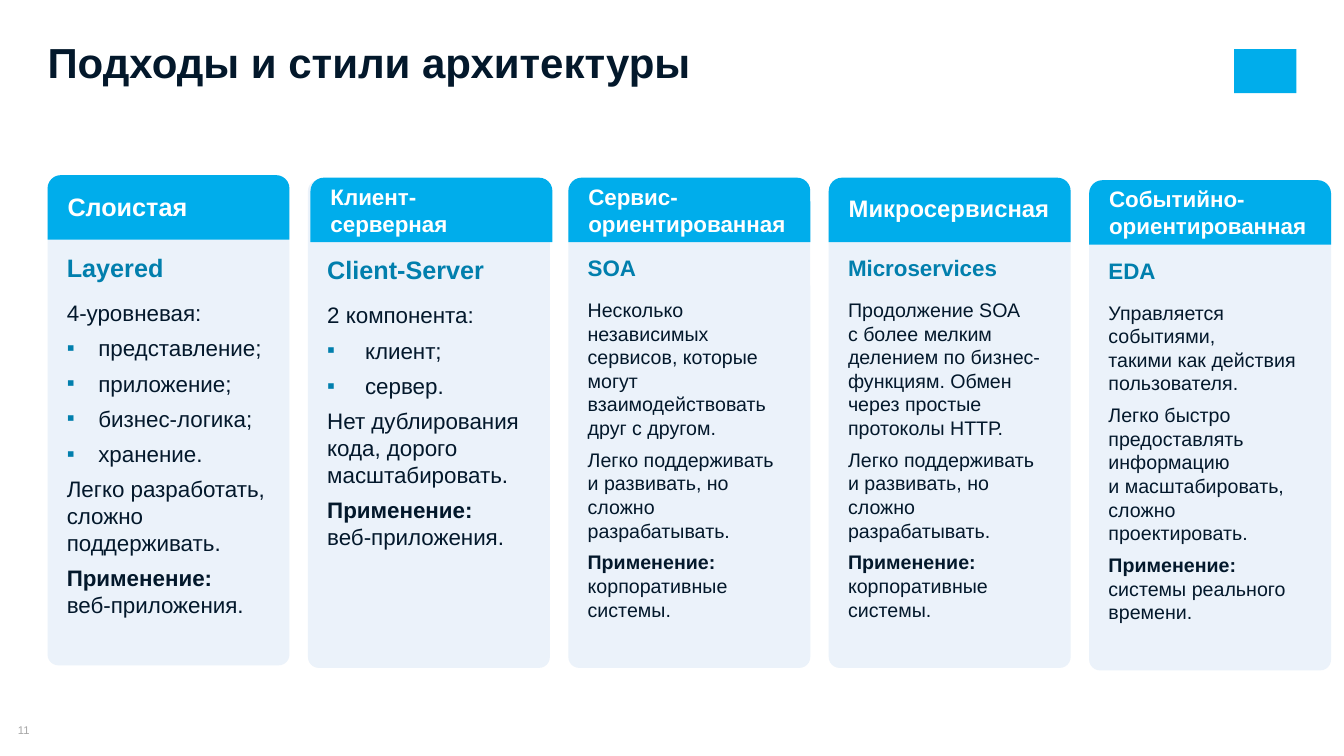
from dataclasses import dataclass

from lxml.etree import SubElement
from pptx import Presentation
from pptx.dml.color import RGBColor
from pptx.enum.shapes import MSO_SHAPE
from pptx.enum.text import MSO_ANCHOR, MSO_AUTO_SIZE, PP_ALIGN
from pptx.oxml.ns import qn
from pptx.util import Pt

CYAN = RGBColor(0x00, 0xAD, 0xEB)
TEAL = RGBColor(0x01, 0x7F, 0xAD)
NAVY = RGBColor(0x03, 0x18, 0x2B)
PALE = RGBColor(0xEB, 0xF2, 0xFA)
GRAY = RGBColor(0xA6, 0xA6, 0xA6)
WHITE = RGBColor(0xFF, 0xFF, 0xFF)

FONT = "Arial"
LEFT, PITCH = 34, 186
CARD_WIDTH, CARD_HEIGHT = 172.8, 348.5
HEADER_HEIGHT, HEADER_RISE = 46, 1.7
INSET = 11.5


@dataclass
class Style:
    """One text card: heading, intro, bullets, remarks and use."""
    name: str
    heading: str
    intro: str
    bullets: list[str]
    verdict: str
    use: str
    top: float = 128.6
    name_size: float = 16
    heading_size: float = 16
    text_size: float = 14
    bullet_indent: float = 0
    header_shift: float = 0
    header_anchor: MSO_ANCHOR = MSO_ANCHOR.MIDDLE
    use_gap: str = " "


STYLES = [
    Style("Слоистая", "Layered", "4-уровневая:",
          ["представление;", "приложение;", "бизнес-логика;", "хранение."],
          "Легко разработать, сложно поддерживать.", "веб-приложения.",
          top=126.8, name_size=18, heading_size=18, text_size=16,
          bullet_indent=22.5, header_anchor=MSO_ANCHOR.TOP, use_gap="\n"),
    Style("Клиент-серверная", "Client-Server", "2 компонента:",
          ["клиент;", "сервер."],
          "Нет дублирования кода, дорого масштабировать.", "веб-приложения.",
          heading_size=18, text_size=16, bullet_indent=27,
          header_shift=1.8, use_gap="\n"),
    Style("Сервис-ориентированная", "SOA",
          "Несколько независимых сервисов, которые могут взаимодействовать друг с другом.",
          [], "Легко поддерживать\nи развивать, но сложно разрабатывать.",
          "корпоративные системы."),
    Style("Микросервисная", "Microservices",
          "Продолжение ЅОА\nс более мелким делением по бизнес-функциям. "
          "Обмен\nчерез простые протоколы НТТР.",
          [], "Легко поддерживать\nи развивать, но сложно разрабатывать.",
          "корпоративные системы.",
          name_size=17, header_anchor=MSO_ANCHOR.TOP),
    Style("Событийно-ориентированная", "EDA",
          "Управляется событиями,\nтакими как действия пользователя.",
          [], "Легко быстро предоставлять информацию\nи масштабировать, сложно проектировать.",
          "системы реального времени.", top=130.4),
]


def add_text(paragraph, text: str, size: float, color: RGBColor, bold: bool = False) -> None:
    """Add runs to a paragraph, with a line break at each newline."""
    for index, line in enumerate(text.split("\n")):
        if index:
            paragraph.add_line_break()
        if line:
            run = paragraph.add_run()
            run.text = line
            run.font.name = FONT
            run.font.size = Pt(size)
            run.font.bold = bold
            run.font.color.rgb = color


def next_paragraph(frame, space_after: float):
    first = frame.paragraphs[0]
    paragraph = frame.add_paragraph() if first.runs else first
    paragraph.alignment = PP_ALIGN.LEFT
    paragraph.space_after = Pt(space_after)
    return paragraph


def set_bullet(paragraph, indent: float) -> None:
    properties = paragraph._p.get_or_add_pPr()
    properties.set("marL", str(Pt(indent)))
    properties.set("indent", str(-Pt(indent)))
    color = SubElement(properties, qn("a:buClr"))
    SubElement(color, qn("a:srgbClr"), val=str(TEAL))
    SubElement(properties, qn("a:buFont"), typeface=FONT)
    SubElement(properties, qn("a:buChar"), char="▪")


def set_frame(frame, anchor: MSO_ANCHOR, side: float, top: float, bottom: float) -> None:
    frame.word_wrap = True
    frame.auto_size = MSO_AUTO_SIZE.NONE
    frame.vertical_anchor = anchor
    frame.margin_left = frame.margin_right = Pt(side)
    frame.margin_top, frame.margin_bottom = Pt(top), Pt(bottom)


def add_block(slide, kind: MSO_SHAPE, left: float, top: float, width: float,
              height: float, fill: RGBColor):
    shape = slide.shapes.add_shape(kind, Pt(left), Pt(top), Pt(width), Pt(height))
    shape.shadow.inherit = False
    shape.fill.solid()
    shape.fill.fore_color.rgb = fill
    shape.line.fill.background()
    return shape


def add_card(slide, style: Style, left: float) -> None:
    # Card body
    body = add_block(slide, MSO_SHAPE.ROUNDED_RECTANGLE, left, style.top,
                     CARD_WIDTH, CARD_HEIGHT, PALE)
    body.adjustments[0] = 0.045
    frame = body.text_frame
    set_frame(frame, MSO_ANCHOR.TOP, INSET, 51, INSET)
    add_text(next_paragraph(frame, 12), style.heading, style.heading_size, TEAL, True)
    add_text(next_paragraph(frame, 6), style.intro, style.text_size, NAVY)
    for bullet in style.bullets:
        paragraph = next_paragraph(frame, 6)
        set_bullet(paragraph, style.bullet_indent)
        add_text(paragraph, bullet, style.text_size, NAVY)
    add_text(next_paragraph(frame, 6), style.verdict, style.text_size, NAVY)
    paragraph = next_paragraph(frame, 6)
    add_text(paragraph, "Применение:", style.text_size, NAVY, True)
    add_text(paragraph, style.use_gap + style.use, style.text_size, NAVY)

    # Card header
    header = add_block(slide, MSO_SHAPE.ROUND_2_SAME_RECTANGLE, left + style.header_shift,
                       style.top - HEADER_RISE, CARD_WIDTH, HEADER_HEIGHT, CYAN)
    header.adjustments[0] = 0.206
    set_frame(header.text_frame, style.header_anchor, INSET, 8.6, INSET)
    add_text(next_paragraph(header.text_frame, 4), style.name, style.name_size, WHITE, True)


def main() -> None:
    presentation = Presentation()
    presentation.slide_width, presentation.slide_height = Pt(960), Pt(540)
    slide = presentation.slides.add_slide(presentation.slide_layouts[5])

    # Title
    title = slide.shapes.title
    title.left, title.top, title.width, title.height = Pt(LEFT), Pt(33), Pt(757), Pt(29)
    set_frame(title.text_frame, MSO_ANCHOR.TOP, 0, 0, 0)
    paragraph = next_paragraph(title.text_frame, 0)
    paragraph.line_spacing = 0.8
    add_text(paragraph, "Подходы и стили архитектуры", 30, NAVY, True)

    # Plain mark in the corner
    add_block(slide, MSO_SHAPE.RECTANGLE, 881.5, 35, 44.5, 31.5, CYAN)

    # Slide number
    number = slide.shapes.add_textbox(Pt(0), Pt(517), Pt(34), Pt(9))
    set_frame(number.text_frame, MSO_ANCHOR.MIDDLE, 0, 0, 0)
    paragraph = next_paragraph(number.text_frame, 0)
    paragraph.alignment = PP_ALIGN.CENTER
    add_text(paragraph, "11", 8, GRAY)

    # Architecture styles
    for column, style in enumerate(STYLES):
        add_card(slide, style, LEFT + column * PITCH)

    presentation.save("out.pptx")


if __name__ == "__main__":
    main()
